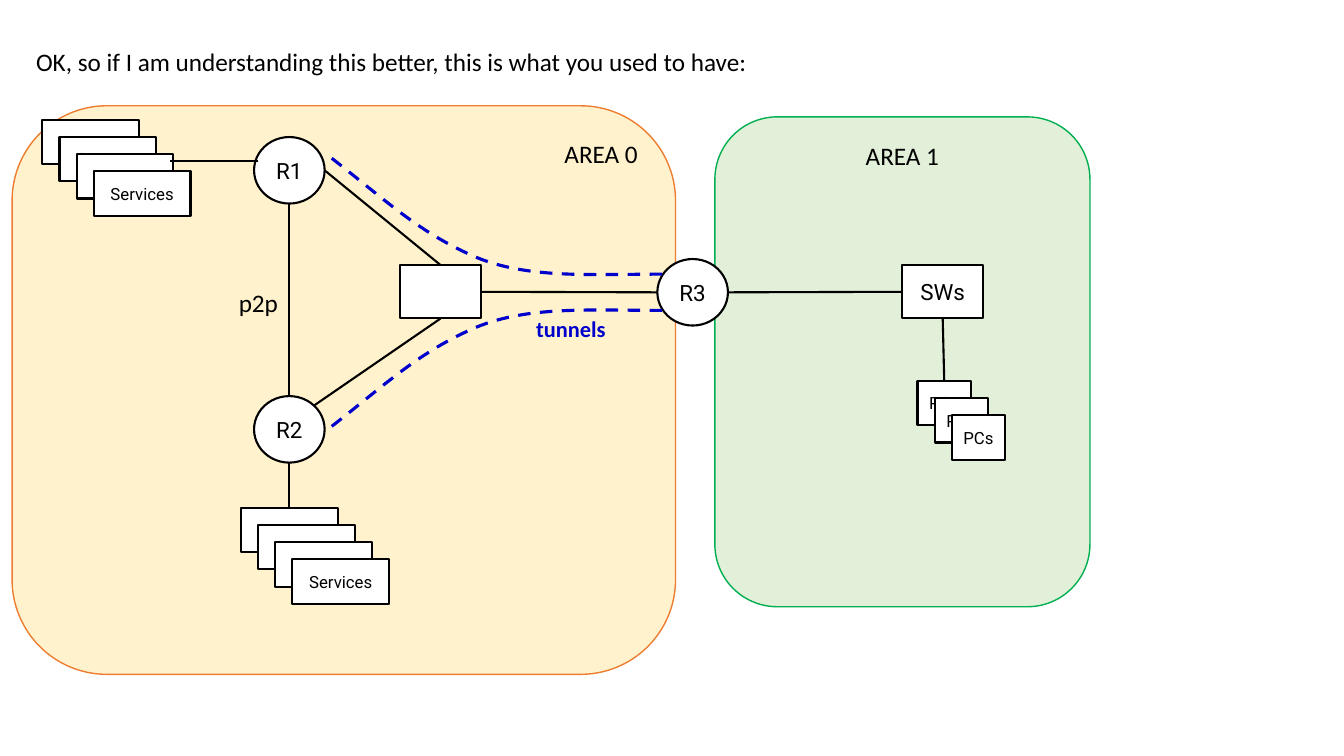
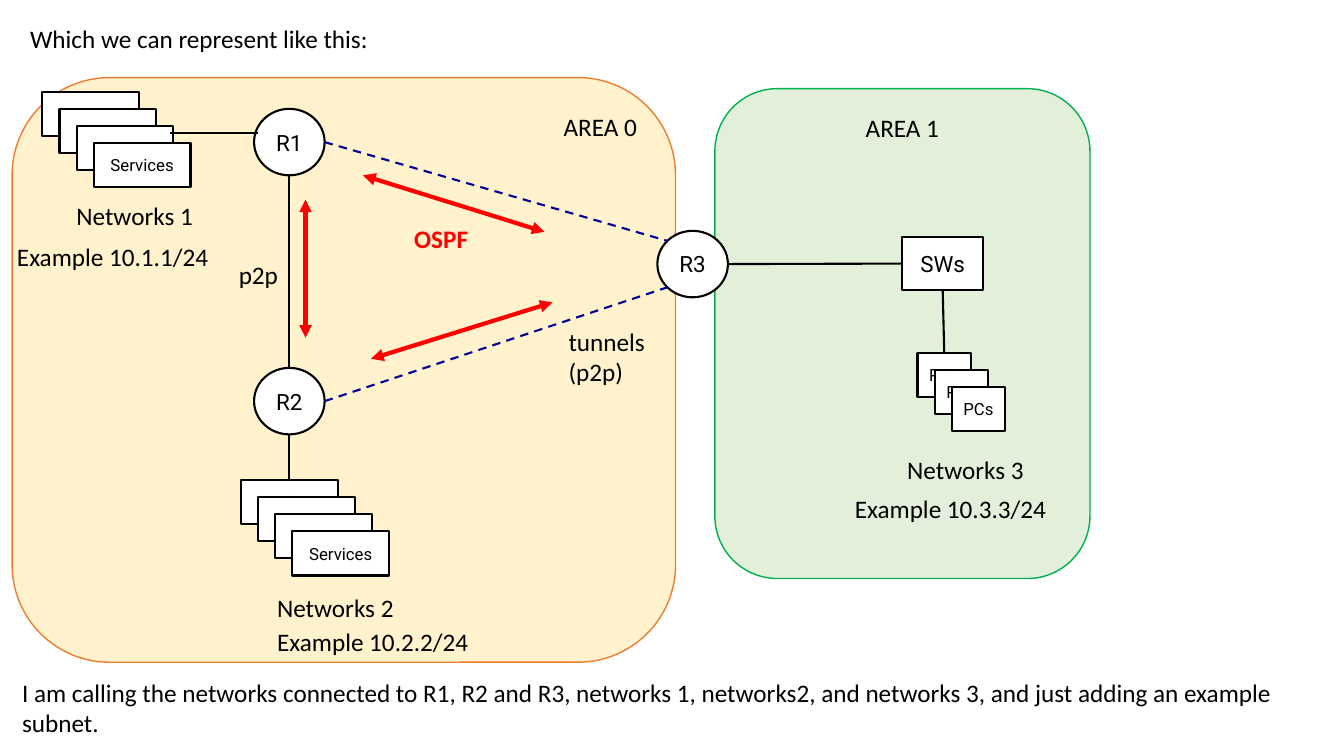
from dataclasses import dataclass

from lxml import etree
from pptx import Presentation
from pptx import util as u
from pptx.dml.color import RGBColor
from pptx.enum import dml, shapes, text
from pptx.oxml.ns import qn

PX = 9144  # 100 px to the inch
KIND = shapes.MSO_SHAPE
ALIGN = text.PP_ALIGN


@dataclass(frozen=True)
class Theme:
    ink: str = "000000"
    paper: str = "FFFFFF"
    sand: str = "FFF2CC"
    orange: str = "ED7D31"
    mint: str = "E2F0D9"
    green: str = "00B050"
    blue: str = "0000CC"
    navy: str = "000099"
    red: str = "FF0000"
    body: str = "Calibri"
    label: str = "Roboto"
    large: int = 18
    mid: int = 16
    small: int = 12
    thin: float = 1
    line: float = 1.5
    bold: float = 2.25
    thick: float = 3


T = Theme()


def rgb(code):
    return RGBColor.from_string(code)


def style(frame, size, font, color=T.ink, bold=False, align=None):
    for para in frame.paragraphs:
        para.alignment = align
        for run in para.runs:
            run.font.size = u.Pt(size)
            run.font.name = font
            run.font.bold = bold
            run.font.color.rgb = rgb(color)


def stroke(line, color, width, dash=False):
    line.color.rgb = rgb(color)
    line.width = u.Pt(width)
    if dash:
        line.dash_style = dml.MSO_LINE.DASH


@dataclass
class Box:
    """A region of a slide; parts are placed in px from its top left corner."""
    slide: object
    left: int = 0
    top: int = 0

    def spot(self, x, y):
        return (self.left + x) * PX, (self.top + y) * PX

    def shape(self, kind, x, y, w, h, fill, edge, width):
        item = self.slide.shapes.add_shape(
            kind, *self.spot(x, y), w * PX, h * PX)
        item.shadow.inherit = False
        item.fill.solid()
        item.fill.fore_color.rgb = rgb(fill)
        stroke(item.line, edge, width)
        return item

    def area(self, x, y, w, h, name, fill, edge, align):
        item = self.shape(KIND.ROUNDED_RECTANGLE, x, y, w, h,
                          fill, edge, T.thin)
        frame = item.text_frame
        frame.text = name
        frame.vertical_anchor = text.MSO_ANCHOR.TOP
        style(frame, T.large, T.body, align=align)

    def node(self, kind, x, y, w, h, name="", size=T.mid):
        item = self.shape(kind, x, y, w, h, T.paper, T.ink, T.line)
        frame = item.text_frame
        frame.margin_left = frame.margin_right = 0
        frame.vertical_anchor = text.MSO_ANCHOR.MIDDLE
        frame.text = name
        style(frame, size, T.label, align=ALIGN.CENTER)
        return item

    def router(self, x, y, name):
        return self.node(KIND.OVAL, x, y, 70, 66, name)

    def switch(self, x, y, name=""):
        return self.node(KIND.RECTANGLE, x, y, 80, 53, name)

    def stack(self, x, y, w, name, count, step=17):
        """Overlapping boxes, each lower right of the last."""
        return [self.node(KIND.RECTANGLE, x + i * step, y + i * step,
                          w, 44, name, T.small) for i in range(count)]

    def link(self, start, end, color=T.ink, width=T.line,
             dash=False, arrows=False):
        """Each end is a point (x, y) or a joint (shape, side)."""
        ends = [p if isinstance(p[0], int) else None for p in (start, end)]
        spots = [self.spot(*p) if p else (0, 0) for p in ends]
        wire = self.slide.shapes.add_connector(
            shapes.MSO_CONNECTOR.STRAIGHT, *spots[0], *spots[1])
        if not ends[0]:
            wire.begin_connect(*start)
        if not ends[1]:
            wire.end_connect(*end)
        stroke(wire.line, color, width, dash)
        if arrows:
            for tag in ("a:headEnd", "a:tailEnd"):
                etree.SubElement(wire.line._ln, qn(tag), type="triangle")
        etree.SubElement(wire.element.spPr, qn("a:effectLst"))

    def curve(self, points):
        """Dashed curve: a start, then three points to each Bezier part."""
        pen = self.slide.shapes.build_freeform(*points[0], scale=PX)
        pen.add_line_segments(points[1:], close=False)
        item = pen.convert_to_shape(*self.spot(0, 0))
        item.shadow.inherit = False
        item.fill.background()
        stroke(item.line, T.blue, T.bold, dash=True)
        trace = item.element.find(".//" + qn("a:path"))
        parts = trace.findall(qn("a:lnTo"))
        for i in range(0, len(parts), 3):
            bend = etree.SubElement(trace, qn("a:cubicBezTo"))
            for part in parts[i:i + 3]:
                bend.append(part[0])
                trace.remove(part)

    def note(self, x, y, w, words, h=40, size=T.large, color=T.ink,
             bold=False, wrap=False):
        item = self.slide.shapes.add_textbox(
            *self.spot(x, y), w * PX, h * PX)
        frame = item.text_frame
        frame.text = words
        frame.word_wrap = wrap
        frame.auto_size = text.MSO_AUTO_SIZE.SHAPE_TO_FIT_TEXT
        style(frame, size, T.body, color, bold)


def network(box, height):
    """Both areas, with the parts that every slide shows."""
    box.area(0, 0, 658, height, "AREA 0", T.sand, T.orange, ALIGN.RIGHT)
    box.area(697, 11, 372, 486, "AREA 1", T.mint, T.green, ALIGN.CENTER)
    lower = box.router(240, 288, "R2")
    box.router(240, 31, "R1")
    box.router(640, 152, "R3")
    hub = box.switch(883, 158, "SWs")
    hosts = box.stack(898, 273, 53, "PCs", 3)
    south = box.stack(227, 399, 96, "Services", 4)
    box.stack(30, 14, 96, "Services", 4)
    box.link((710, 185), (hub, 1))
    box.link((hub, 2), (hosts[0], 0))
    box.link((275, 97), (lower, 0))
    box.link((275, 354), (south[0], 0))
    box.link((244, 55), (157, 55))
    box.note(215, 175, 60, "p2p")


def tunnels(box):
    """The middle switch, with a tunnel on each side of its trunk."""
    core = box.switch(385, 158)
    box.link((core, 3), (640, 185))
    box.link((300, 297), (core, 2))
    box.link((310, 64), (core, 0))
    low = [(317, 318), (372, 275), (402, 246), (455, 222),
           (508, 198), (571, 203), (646, 203)]
    box.curve(low)
    box.curve([(x, 370 - y) for x, y in low])
    box.note(510, 203, 90, "tunnels", 37, T.mid, T.blue, bold=True)


def routing(box):
    """Direct tunnels, routing arrows and the subnets."""
    for y, end in ((64, 162), (321, 208)):
        box.link((310, y), (650, end), T.navy, dash=True)
    for start, end in (((291, 121), (291, 258)),
                       ((348, 97), (528, 153)),
                       ((356, 279), (536, 223))):
        box.link(start, end, T.red, T.thick, arrows=True)
    box.note(389, 140, 74, "OSPF", color=T.red, bold=True)
    box.note(542, 242, 99, "tunnels\n(p2p)", 71)
    nets = (((54, 117), (-5, 157)),
            ((253, 506), (253, 539)),
            ((878, 369), (826, 407)))
    for n, (name, range_) in enumerate(nets, 1):
        box.note(*name, 137, f"Networks {n}")
        box.note(*range_, 212, f"Example 10.{n}.{n}/24")


def before(slide):
    page, box = Box(slide), Box(slide, 12, 105)
    network(box, 564)
    tunnels(box)
    page.note(26, 41, 734, "OK, so if I am understanding this better, "
              "this is what you used to have:")


def after(slide):
    page, box = Box(slide), Box(slide, 12, 77)
    network(box, 580)
    routing(box)
    page.note(20, 18, 372, "Which we can represent like this:")
    page.note(12, 667, 1265, "I am calling the networks connected to R1, R2 "
              "and R3, networks 1, networks2, and networks 3, and just "
              "adding an example subnet.", 71, wrap=True)


def main():
    deck = Presentation()
    deck.slide_width, deck.slide_height = 1333 * PX, 750 * PX
    for build in (before, after):
        build(deck.slides.add_slide(deck.slide_layouts[6]))
    deck.save("out.pptx")


if __name__ == "__main__":
    main()
